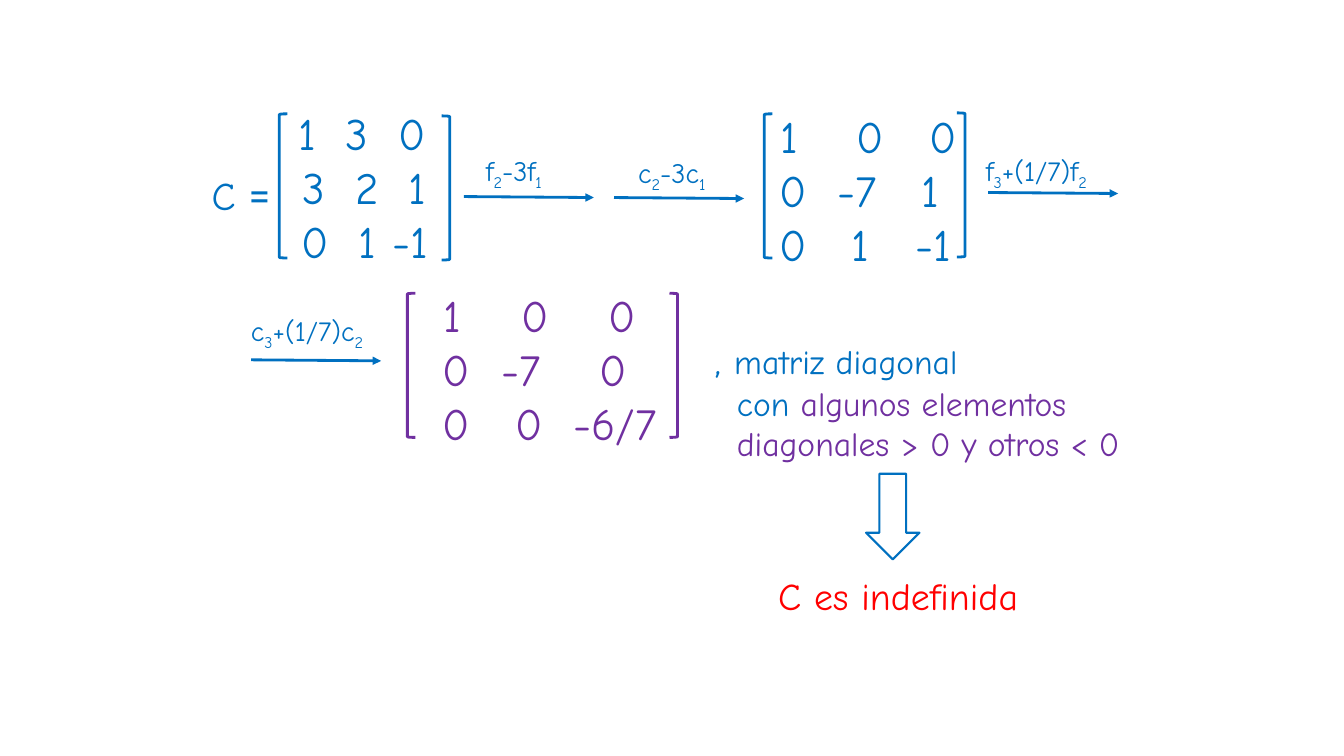
from pptx import Presentation
from pptx.dml.color import RGBColor
from pptx.enum.shapes import MSO_CONNECTOR, MSO_SHAPE
from pptx.oxml.ns import qn
from pptx.util import Inches, Pt
from lxml import etree

STRAIGHT = MSO_CONNECTOR.STRAIGHT
LEFT_BRACKET = MSO_SHAPE.LEFT_BRACKET
RIGHT_BRACKET = MSO_SHAPE.RIGHT_BRACKET
DOWN_ARROW = MSO_SHAPE.DOWN_ARROW

THEME = {
    "blue": "0070C0", "purple": "7030A0", "red": "FF0000",
    "font": "Comic Neue", "symbol_font": "Roboto",
    "entry": 32, "name": 28, "result": 27, "note": 24, "step": 20,
    "line": 2, "outline": 1.5,
}
INSET = 0.1
BRACKET_SIZE = (0.08, 1.43)
ARROW_RUN, ARROW_DROP = 1.29, 0.01

# Content: each matrix row holds its entries and the centre of each entry
MATRICES = [
    {"color": "blue", "text_at": (2.75, 1.0),
     "brackets": ((2.77, 1.13), (4.38, 1.15)),
     "rows": [(("1", "3", "0"), (3.05, 3.54, 4.09)),
              (("3", "2", "1"), (3.11, 3.64, 4.14)),
              (("0", "1", "-1"), (3.13, 3.65, 4.07))]},
    {"color": "blue", "text_at": (7.49, 1.03),
     "brackets": ((7.58, 1.13), (9.49, 1.12)),
     "rows": [(("1", "0", "0"), (7.83, 8.63, 9.36)),
              (("0", "-7", "1"), (7.87, 8.5, 9.23)),
              (("0", "1", "-1"), (7.87, 8.53, 9.26))]},
    {"color": "purple", "text_at": (4.16, 2.81),
     "brackets": ((4.04, 2.91), (6.64, 2.91)),
     "rows": [(("1", "0", "0"), (4.49, 5.31, 6.17)),
              (("0", "-7", "0"), (4.53, 5.17, 6.08)),
              (("0", "0", "-6/7"), (4.53, 5.25, 6.1))]},
]
# Row or column operation: (label pieces, label corner, arrow start);
# every second piece is a subscript
STEPS = [
    (("f", "2", "-3f", "1"), (4.72, 1.47), (4.6, 1.95)),
    (("c", "2", "-3c", "1"), (6.23, 1.49), (6.09, 1.96)),
    (("f", "3", "+(1/7)f", "2"), (9.68, 1.47), (9.8, 1.91)),
    (("c", "3", "+(1/7)c", "2"), (2.39, 3.06), (2.49, 3.57)),
]
MATRIX_NAME = [("C ", "name", "blue", "font"), ("=", "name", "blue", "symbol_font")]
# Remark line: (left indent, pieces)
REMARK = [
    (0, [(", ", "name", "blue"), ("matriz diagonal", "note", "blue")]),
    (0.22, [("con ", "note", "blue"), ("algunos elementos", "note", "purple")]),
    (0.22, [("diagonales > 0 y otros < 0", "note", "purple")]),
]
CONCLUSION = "C es indefinida"

prs = Presentation()
prs.slide_width, prs.slide_height = Inches(13.33), Inches(7.5)
slide = prs.slides.add_slide(prs.slide_layouts[6])


def rgb(color):
    return RGBColor.from_string(THEME[color])


def style(run, size, color, font="font"):
    run.font.size = Pt(THEME[size])
    run.font.name = THEME[font]
    run.font.color.rgb = rgb(color)


def add_piece(paragraph, text, size, color, font="font"):
    run = paragraph.add_run()
    run.text = text
    style(run, size, color, font)
    return run


def add_frame(left, top, width, height):
    box = slide.shapes.add_textbox(*map(Inches, (left, top, width, height)))
    box.text_frame.word_wrap = True
    return box.text_frame


def add_outline(kind, left, top, width, height, color, weight):
    shape = slide.shapes.add_shape(kind, *map(Inches, (left, top, width, height)))
    shape.shadow.inherit = False
    shape.fill.background()
    shape.line.color.rgb = rgb(color)
    shape.line.width = Pt(THEME[weight])


def line_of(frame, index):
    return frame.paragraphs[0] if index == 0 else frame.add_paragraph()


def add_matrix(color, text_at, brackets, rows):
    for kind, corner in zip((LEFT_BRACKET, RIGHT_BRACKET), brackets):
        add_outline(kind, *corner, *BRACKET_SIZE, color, "line")
    frame = add_frame(*text_at, 2.72, 1.75)
    for index, (entries, centres) in enumerate(rows):
        paragraph = line_of(frame, index)
        paragraph.text = "".join("\t" + entry for entry in entries)
        for run in paragraph.runs:
            style(run, "entry", color)
        tabs = etree.SubElement(paragraph._p.get_or_add_pPr(), qn("a:tabLst"))
        for centre in centres:
            position = Inches(centre - text_at[0] - INSET)
            etree.SubElement(tabs, qn("a:tab"), pos=str(position), algn="ctr")


def add_step(pieces, label_at, start):
    paragraph = add_frame(*label_at, 1.52, 0.44).paragraphs[0]
    for index, piece in enumerate(pieces):
        run = add_piece(paragraph, piece, "step", "blue")
        if index % 2:
            run._r.get_or_add_rPr().set("baseline", "-25000")
    x, y = start
    arrow = slide.shapes.add_connector(
        STRAIGHT, *map(Inches, (x, y, x + ARROW_RUN, y + ARROW_DROP)))
    arrow.line.color.rgb = rgb("blue")
    arrow.line.width = Pt(THEME["line"])
    etree.SubElement(arrow.line._get_or_add_ln(), qn("a:tailEnd"), type="triangle")
    etree.SubElement(arrow._element.spPr, qn("a:effectLst"))


# Matrices and the operations between them
for matrix in MATRICES:
    add_matrix(**matrix)
for step in STEPS:
    add_step(*step)

# Name of the first matrix
name_line = add_frame(2, 1.65, 0.9, 0.57).paragraphs[0]
for piece in MATRIX_NAME:
    add_piece(name_line, *piece)

# Remark on the diagonal
remark = add_frame(6.99, 3.28, 4.79, 1.38)
for index, (indent, pieces) in enumerate(REMARK):
    remark_line = line_of(remark, index)
    remark_line._p.get_or_add_pPr().set("marL", str(Inches(indent)))
    for piece in pieces:
        add_piece(remark_line, *piece)

# Conclusion
add_outline(DOWN_ARROW, 8.59, 4.7, 0.53, 0.85, "blue", "outline")
conclusion = add_frame(7.62, 5.63, 2.8, 0.57)
conclusion.text = CONCLUSION
style(conclusion.paragraphs[0].runs[0], "result", "red")

prs.save("out.pptx")
